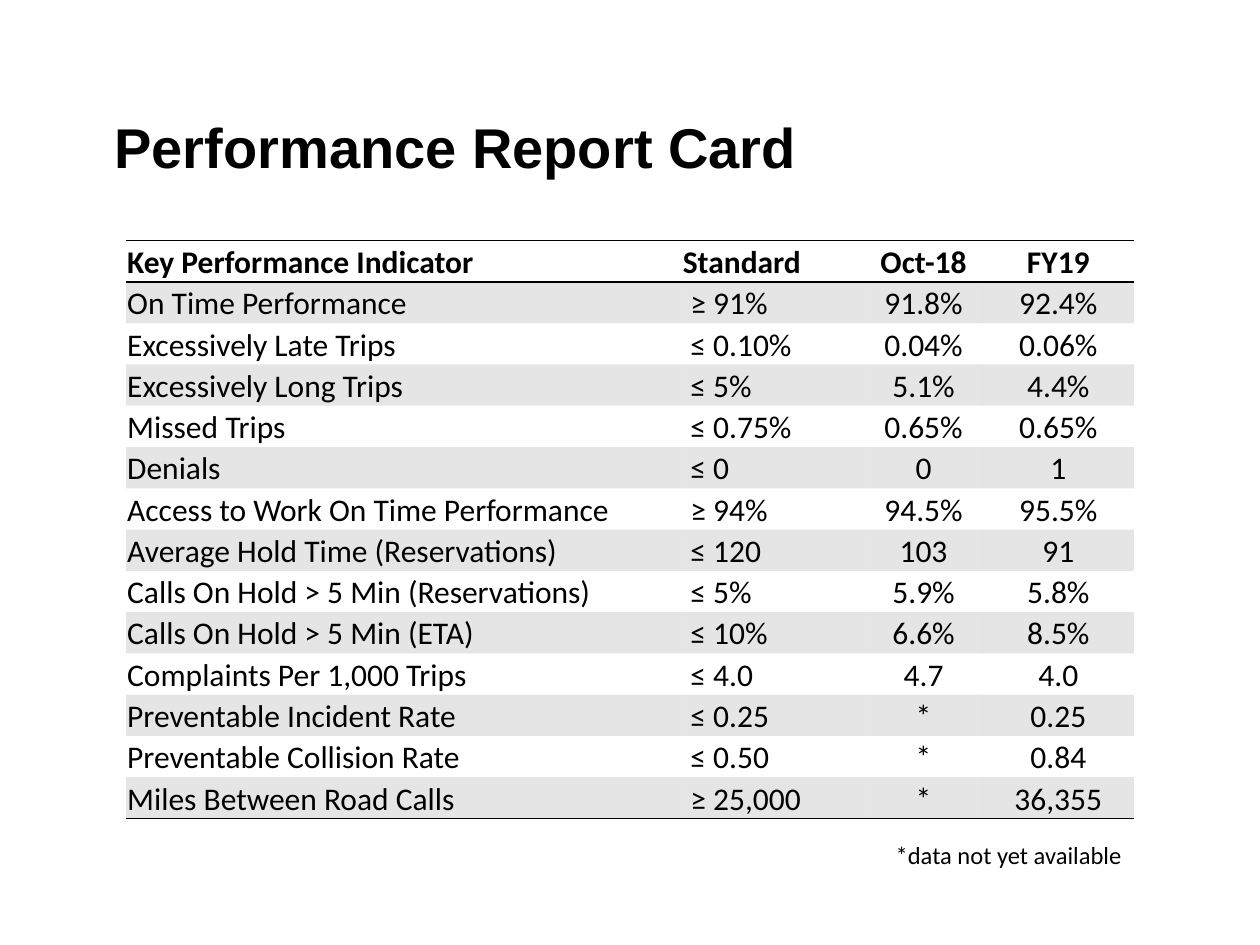
from lxml import etree
from pptx import Presentation
from pptx.dml.color import RGBColor
from pptx.enum import text
from pptx.oxml import ns
from pptx.util import Inches, Pt

BLACK, GRAY = "000000", "808080"
NO_STYLE = "{2D5ABB26-0587-4C30-8999-92F81FD0307C}"
COLUMNS = [4.41, 1.45, 0.94, 1.2]
ROWS = [
    ("Key Performance Indicator", "Standard", "Oct-18", "FY19"),
    ("On Time Performance", "≥ 91%", "91.8%", "92.4%"),
    ("Excessively Late Trips", "≤ 0.10%", "0.04%", "0.06%"),
    ("Excessively Long Trips", "≤ 5%", "5.1%", "4.4%"),
    ("Missed Trips", "≤ 0.75%", "0.65%", "0.65%"),
    ("Denials", "≤ 0", "0", "1"),
    ("Access to Work On Time Performance", "≥ 94%", "94.5%", "95.5%"),
    ("Average Hold Time (Reservations)", "≤ 120", "103", "91"),
    ("Calls On Hold > 5 Min (Reservations)", "≤ 5%", "5.9%", "5.8%"),
    ("Calls On Hold > 5 Min (ETA)", "≤ 10%", "6.6%", "8.5%"),
    ("Complaints Per 1,000 Trips", "≤ 4.0", "4.7", "4.0"),
    ("Preventable Incident Rate", "≤ 0.25", "*", "0.25"),
    ("Preventable Collision Rate", "≤ 0.50", "*", "0.84"),
    ("Miles Between Road Calls", "≥ 25,000", "*", "36,355"),
]


def rgb(color):
    return RGBColor.from_string(color)


def write(p, words, size, font, bold=False, align=text.PP_ALIGN.LEFT):
    p.text = words
    p.alignment = align
    for r in p.runs:
        r.font.name, r.font.size, r.font.bold = font, Pt(size), bold
        r.font.color.rgb = rgb(BLACK)


def add_label(s, box, words, size, font, anchor=text.MSO_ANCHOR.TOP, **style):
    tf = s.shapes.add_textbox(*map(Inches, box)).text_frame
    tf.word_wrap = True
    tf.vertical_anchor = anchor
    write(tf.paragraphs[0], words, size, font, **style)


def add_border(cell, side):
    ln = etree.SubElement(cell._tc.get_or_add_tcPr(), ns.qn("a:" + side), w=str(Pt(1)))
    fill = etree.SubElement(ln, ns.qn("a:solidFill"))
    etree.SubElement(fill, ns.qn("a:srgbClr"), val=BLACK)


def shade(cell):
    cell.fill.solid()
    cell.fill.fore_color.rgb = rgb(GRAY)
    color = cell._tc.tcPr.find(".//" + ns.qn("a:solidFill") + "/" + ns.qn("a:srgbClr")
                               if cell._tc.tcPr.find(ns.qn("a:lnB")) is None
                               else ns.qn("a:solidFill") + "/" + ns.qn("a:srgbClr"))
    etree.SubElement(color, ns.qn("a:alpha"), val="20000")


def add_report_table(s, box):
    frame = s.shapes.add_table(len(ROWS), len(COLUMNS), *map(Inches, box))
    table = frame.table
    table.first_row = table.horz_banding = False
    table._tbl.tblPr.find(ns.qn("a:tableStyleId")).text = NO_STYLE
    for column, width in zip(table.columns, COLUMNS):
        column.width = Inches(width)

    for i, values in enumerate(ROWS):
        header, last = i == 0, i == len(ROWS) - 1
        table.rows[i].height = Inches(box[3] / len(ROWS))
        for j, value in enumerate(values):
            cell = table.cell(i, j)
            # Standards sit slightly right of their heading
            indented = j == 1 and not header
            cell.margin_left = Inches(0.07 if indented else 0.01)
            cell.margin_right = cell.margin_top = Inches(0.01)
            cell.margin_bottom = 0
            cell.vertical_anchor = text.MSO_ANCHOR.BOTTOM
            align = text.PP_ALIGN.CENTER if j > 1 else text.PP_ALIGN.LEFT
            write(cell.text_frame.paragraphs[0], value, 18, "Calibri", header, align)
            # Rules around the header and below the last row
            if header:
                add_border(cell, "lnT")
            if header or last:
                add_border(cell, "lnB")
            if i % 2:
                shade(cell)


def main():
    prs = Presentation()
    prs.slide_width, prs.slide_height = Inches(10), Inches(7.5)
    s = prs.slides.add_slide(prs.slide_layouts[6])

    # Title
    add_label(s, (0.81, 0.84, 8.39, 0.64), "Performance Report Card", 32, "Arial",
              text.MSO_ANCHOR.MIDDLE, bold=True)
    # Indicators
    add_report_table(s, (1, 1.91, 8, 4.59))
    # Footnote
    add_label(s, (6.44, 6.62, 2.56, 0.34), "*data not yet available", 14, "Calibri",
              align=text.PP_ALIGN.RIGHT)
    prs.save("out.pptx")


if __name__ == "__main__":
    main()
